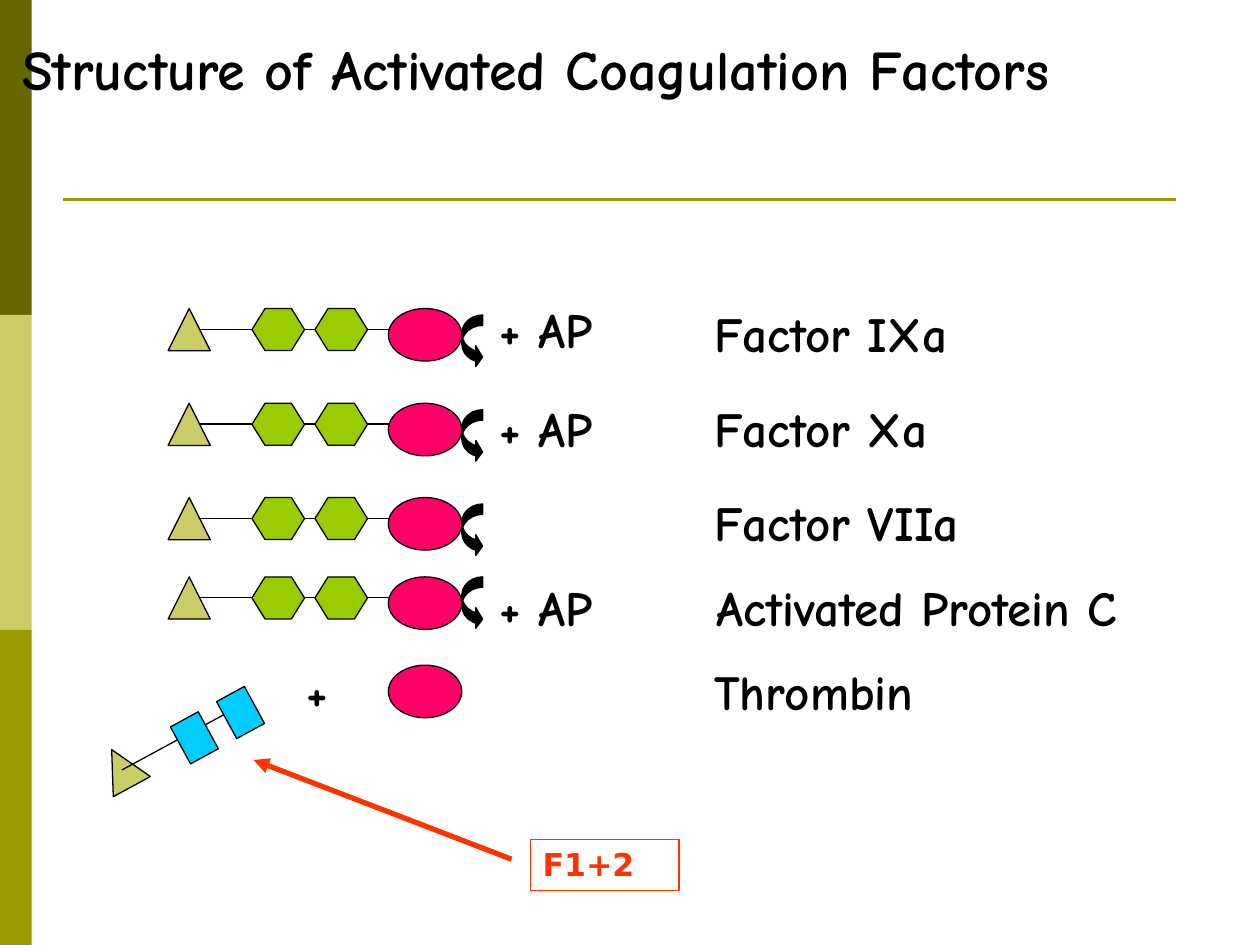
from dataclasses import dataclass

from lxml import etree
from pptx import Presentation
from pptx.dml.color import RGBColor
from pptx.enum import shapes, text
from pptx.oxml import ns
from pptx.util import Cm, Pt


@dataclass(frozen=True)
class Theme:
    ink: str = "000000"
    dark_olive: str = "666600"
    olive: str = "999900"
    sand: str = "CCCC66"
    green: str = "99CC00"
    pink: str = "FF0066"
    blue: str = "00CCFF"
    red: str = "FF3300"
    font: str = "Comic Neue"
    note_font: str = "DejaVu Sans"
    title_size: float = 32
    label_size: float = 28
    note_size: float = 18
    thin: float = 0.75
    rule: float = 1.5
    thick: float = 3


class SlideBuilder:
    def __init__(self, theme, page):
        self.theme = theme
        self.page = page

    def shape(self, kind, left, top, width, height, fill=None, line=None,
              rotation=0, adjustments=()):
        shape = self.page.shapes.add_shape(
            kind, Cm(left), Cm(top), Cm(width), Cm(height))
        shape.shadow.inherit = False
        shape.rotation = rotation
        for index, value in enumerate(adjustments):
            shape.adjustments[index] = value
        if fill:
            shape.fill.solid()
            shape.fill.fore_color.rgb = RGBColor.from_string(fill)
        else:
            shape.fill.background()
        if line:
            shape.line.color.rgb = RGBColor.from_string(line)
            shape.line.width = Pt(self.theme.thin)
        else:
            shape.line.fill.background()
        return shape

    def line(self, start, end, color, width, arrow=False):
        line = self.page.shapes.add_connector(
            shapes.MSO_CONNECTOR.STRAIGHT, *map(Cm, start + end))
        line.line.color.rgb = RGBColor.from_string(color)
        line.line.width = Pt(width)
        if arrow:
            outline = line.line._get_or_add_ln()
            etree.SubElement(outline, ns.qn("a:tailEnd"), type="triangle")
        etree.SubElement(line._element.spPr, ns.qn("a:effectLst"))

    def set_text(self, box, words, size, font, color, wrap=False):
        frame = box.text_frame
        frame.word_wrap = wrap
        frame.auto_size = text.MSO_AUTO_SIZE.SHAPE_TO_FIT_TEXT
        frame.vertical_anchor = text.MSO_ANCHOR.TOP
        para = frame.paragraphs[0]
        para.text = words
        para.alignment = text.PP_ALIGN.LEFT
        para.font.size = Pt(size)
        para.font.name = font
        para.font.bold = True
        para.font.color.rgb = RGBColor.from_string(color)

    def label(self, words, left, top, width, height=1.45, size=None):
        box = self.page.shapes.add_textbox(
            Cm(left), Cm(top), Cm(width), Cm(height))
        self.set_text(box, words, size or self.theme.label_size,
                      self.theme.font, self.theme.ink)

    def catalytic_domain(self, top):
        self.shape(shapes.MSO_SHAPE.OVAL, 7.83, top, 1.48, 1.06,
                   self.theme.pink, self.theme.ink)

    def gla_domain(self, left, top, rotation=0):
        self.shape(shapes.MSO_SHAPE.ISOSCELES_TRIANGLE, left, top, 0.85, 0.85,
                   self.theme.sand, self.theme.ink, rotation)

    def factor_chain(self, top, arrow_top):
        theme = self.theme
        middle = top + 0.42
        self.line((3.81, middle), (8.89, middle), theme.ink, theme.thin)
        self.gla_domain(3.39, top)
        for left in (5.08, 6.35):
            self.shape(shapes.MSO_SHAPE.HEXAGON, left, top, 1.06, 0.85,
                       theme.green, theme.ink, adjustments=(0.31, 1.15))
        self.catalytic_domain(top)
        self.shape(shapes.MSO_SHAPE.CURVED_RIGHT_ARROW, 9.31, arrow_top,
                   0.42, 1.06, theme.ink, theme.ink,
                   adjustments=(0.5, 1, 0.33))


def main():
    theme = Theme()
    deck = Presentation()
    deck.slide_width, deck.slide_height = Cm(25.4), Cm(19.05)
    page = deck.slides.add_slide(deck.slide_layouts[6])
    slide = SlideBuilder(theme, page)

    # Side band and title
    band = 6.35
    for index, color in enumerate((theme.dark_olive, theme.sand, theme.olive)):
        slide.shape(shapes.MSO_SHAPE.RECTANGLE, 0, index * band, 0.64, band,
                    color)
    slide.line((1.27, 4.02), (23.7, 4.02), theme.olive, theme.rule)
    slide.label("Structure of Activated Coagulation Factors",
                0.2, 0.58, 24.64, 1.63, theme.title_size)

    # Factor rows: name, left, width, chain top, name top, arrow top, AP top
    rows = [
        ("Factor IXa", 14.15, 5.92, 6.22, 5.99, 6.35, 5.92),
        ("Factor Xa", 14.15, 5.36, 8.13, 7.9, 8.26, 7.9),
        ("Factor VIIa", 14.15, 6.4, 10.03, 9.8, 10.16, None),
        ("Activated Protein C", 14.2, 10.01, 11.63, 11.51, 11.63, 11.51),
    ]
    for name, left, width, top, name_top, arrow_top, peptide_top in rows:
        slide.factor_chain(top, arrow_top)
        slide.label(name, left, name_top, width)
        if peptide_top is not None:
            slide.label("+ AP", 9.83, peptide_top, 2.82)

    # Thrombin and the released fragment
    slide.catalytic_domain(13.41)
    slide.label("Thrombin", 14.15, 13.21, 4.95)
    slide.label("+", 5.92, 13.21, 1.12)
    tilt = -28.6
    slide.gla_domain(2.03, 15.06, tilt)
    slide.line((2.46, 15.52), (5.08, 14.1), theme.ink, theme.thin)
    for left, top in ((3.6, 14.45), (4.53, 13.94)):
        slide.shape(shapes.MSO_SHAPE.RECTANGLE, left, top, 0.64, 0.85,
                    theme.blue, theme.ink, tilt)

    # Fragment callout
    note = slide.shape(shapes.MSO_SHAPE.RECTANGLE, 10.69, 16.92, 3, 1.04,
                       line=theme.red)
    slide.set_text(note, "F1+2", theme.note_size, theme.note_font, theme.red,
                   wrap=True)
    slide.line((10.31, 17.32), (5.11, 15.32), theme.red, theme.thick,
               arrow=True)

    deck.save("out.pptx")


if __name__ == "__main__":
    main()
